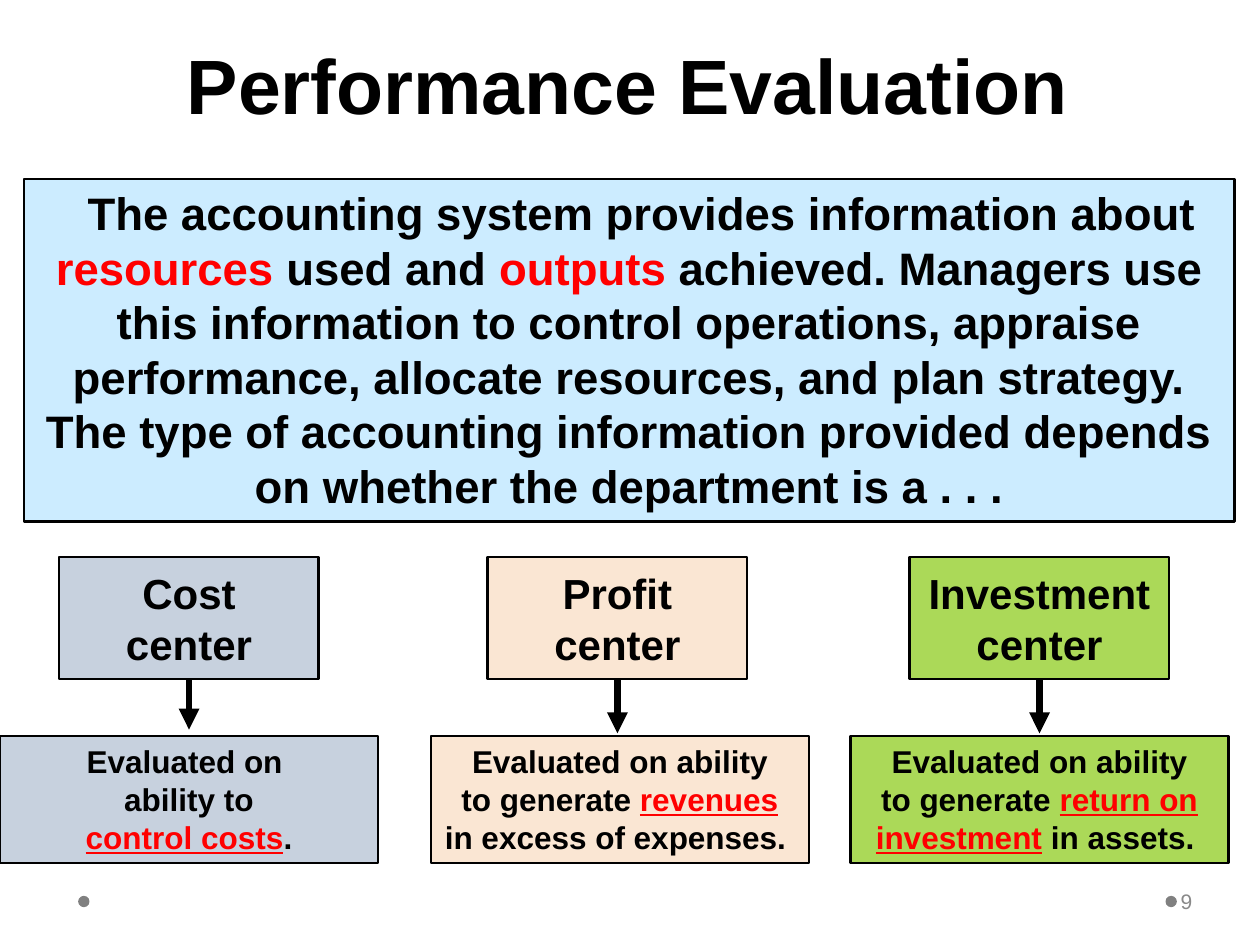
from dataclasses import dataclass

from lxml.etree import SubElement
from pptx import Presentation
from pptx.dml.color import RGBColor
from pptx.enum.shapes import MSO_CONNECTOR, MSO_SHAPE
from pptx.enum.text import MSO_ANCHOR, PP_ALIGN
from pptx.oxml.ns import qn
from pptx.util import Inches, Pt

COLS, ROWS = 100, 75
RED, BLACK = "FF0000", "000000"
HEAD_W, HEAD_H, HEAD_TOP = 20.6, 9.7, 44.2
GOAL_W, GOAL_H, GOAL_TOP = 30, 10.1, 58.4

prs = Presentation()
prs.slide_width, prs.slide_height = Inches(10), Inches(7.5)
s = prs.slides.add_slide(prs.slide_layouts[6])


@dataclass
class Run:
    text: str
    color: str = BLACK
    underline: bool = False


@dataclass
class Center:
    name: str
    fill: str
    head_left: float
    goal_left: float
    arrow_end: float
    goal: list[Run]


def col(n: float) -> int:
    """Return the length of n grid columns."""
    return round(prs.slide_width * n / COLS)


def row(n: float) -> int:
    """Return the length of n grid rows."""
    return round(prs.slide_height * n / ROWS)


def rgb(value: str) -> RGBColor:
    """Return the colour of a hex string."""
    return RGBColor.from_string(value)


def write(sp, runs: list[Run], size: float, bold=True, align=PP_ALIGN.CENTER, **frame):
    """Write runs into one paragraph and return it."""
    tf = sp.text_frame
    for key, value in ({"word_wrap": True, "vertical_anchor": MSO_ANCHOR.TOP} | frame).items():
        setattr(tf, key, value)
    p = tf.paragraphs[0]
    p.alignment = align
    for run in runs:
        for i, line in enumerate(run.text.split("\n")):
            if i:
                p.add_line_break()
            if not line:
                continue
            r = p.add_run()
            r.text = line
            fmt = {"name": "Arial", "size": Pt(size), "bold": bold, "underline": run.underline}
            for key, value in fmt.items():
                setattr(r.font, key, value)
            r.font.color.rgb = rgb(run.color)
    return p


def shape(kind, x: float, y: float, w: float, h: float, fill: str, line: str | None = BLACK):
    """Draw a filled preset shape on the grid."""
    sp = s.shapes.add_shape(kind, col(x), row(y), col(w), row(h))
    sp.shadow.inherit = False
    sp.fill.solid()
    sp.fill.fore_color.rgb = rgb(fill)
    if line:
        sp.line.color.rgb = rgb(line)
        sp.line.width = Pt(1.5)
    else:
        sp.line.fill.background()
    return sp


def arrow(start, x: float, end: float) -> None:
    """Draw an arrow down from the bottom of a box."""
    cx = s.shapes.add_connector(MSO_CONNECTOR.STRAIGHT, col(x), row(HEAD_TOP + HEAD_H), col(x), row(end))
    cx.begin_connect(start, 2)
    cx.line.color.rgb = rgb(BLACK)
    cx.line.width = Pt(4)
    SubElement(cx.line._get_or_add_ln(), qn("a:tailEnd"), type="triangle")
    SubElement(cx._element.spPr, qn("a:effectLst"))


def draw_center(c: Center) -> None:
    """Draw a center's heading, arrow and evaluation."""
    goal = shape(MSO_SHAPE.RECTANGLE, c.goal_left, GOAL_TOP, GOAL_W, GOAL_H, c.fill)
    write(goal, c.goal, 18)
    head = shape(MSO_SHAPE.RECTANGLE, c.head_left, HEAD_TOP, HEAD_W, HEAD_H, c.fill)
    write(head, [Run(c.name)], 24, word_wrap=False, vertical_anchor=MSO_ANCHOR.MIDDLE)
    arrow(head, c.head_left + HEAD_W / 2, c.arrow_end)


CENTERS = [
    Center("Cost\ncenter", "C7D1DE", 4.7, 0, 57.9,
           [Run("Evaluated on \nability to\n"), Run("control costs", RED, True), Run(".")]),
    Center("Profit\ncenter", "FAE6D3", 38.7, 34.2, 58.2,
           [Run("Evaluated on ability\nto generate "), Run("revenues\n", RED, True),
            Run("in excess of expenses. ")]),
    Center("Investment\ncenter", "ABD958", 72.2, 67.5, 58.2,
           [Run("Evaluated on ability\nto generate "), Run("return on investment", RED, True),
            Run(" in assets. ")]),
]
INTRO = [
    Run("The accounting system provides information about "),
    Run("resources", RED),
    Run(" used and "),
    Run("outputs", RED),
    Run(" achieved. Managers use this information to control operations, appraise performance, "
        "allocate resources, and plan strategy. The type of accounting information provided "
        "depends on whether the department is a . . ."),
]

for left in (6.2, 92.5):
    shape(MSO_SHAPE.OVAL, left, 71.1, 0.9, 0.9, "808080", None)

title = s.shapes.add_textbox(col(4), row(3), col(91.7), row(7.8))
p = write(title, [Run("Performance Evaluation")], 44, vertical_anchor=MSO_ANCHOR.BOTTOM)
p.line_spacing = Pt(58)

number = s.shapes.add_textbox(col(93.4), row(69.5), col(6.1), row(4))
write(number, [Run("9", "898989")], 12, False, PP_ALIGN.LEFT,
      vertical_anchor=MSO_ANCHOR.MIDDLE, margin_left=col(0.3), margin_right=col(0.5))

intro = shape(MSO_SHAPE.RECTANGLE, 1.9, 14.2, 96.1, 27.2, "CCECFF")
p = write(intro, INTRO, 26)
p._p.get_or_add_pPr().set("indent", str(col(2)))

for center in CENTERS:
    draw_center(center)

prs.save("out.pptx")
